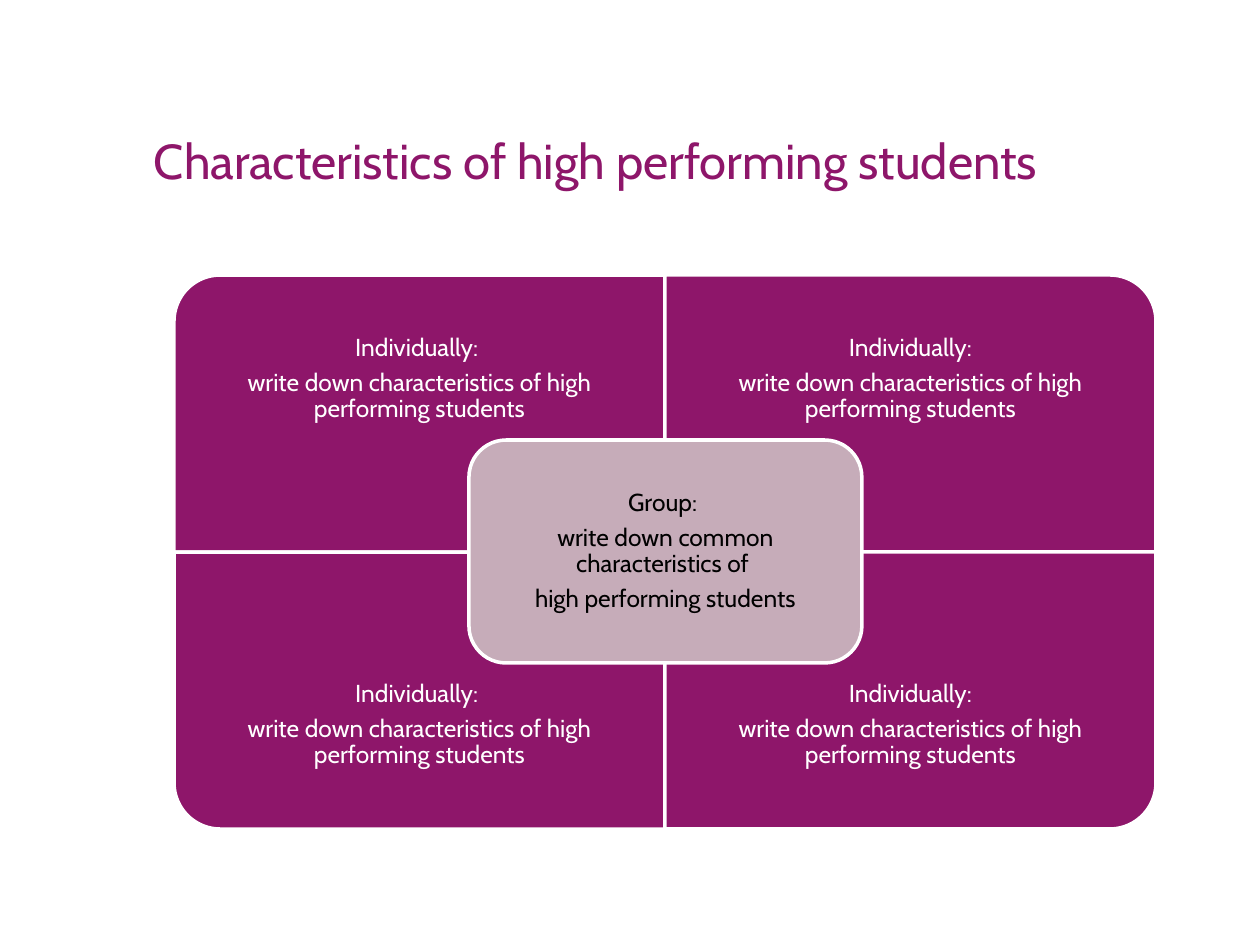
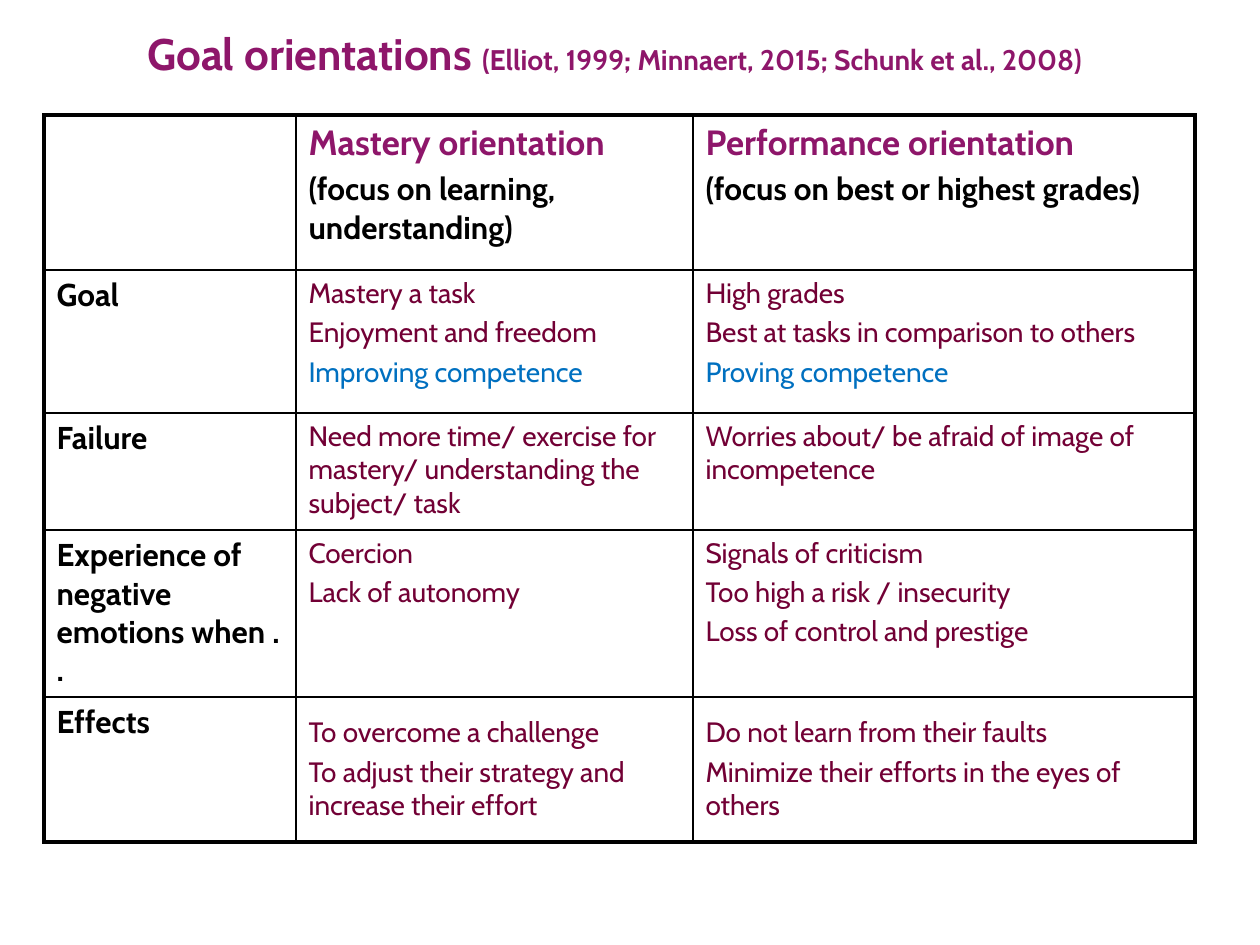
from itertools import product

from lxml import etree
from pptx import Presentation
from pptx import util as u
from pptx.dml.color import RGBColor
from pptx.enum import shapes, text
from pptx.oxml.ns import qn

PX = 914400 / 126
FONT = "Cabin"
COLORS = {
    "purple": "8E166A",
    "mauve": "C6ACB9",
    "wine": "720035",
    "blue": "0070C0",
    "black": "000000",
    "white": "FFFFFF",
}
STYLES = {
    "title": ("purple", {"size": u.Pt(28)}),
    "bold title": ("purple", {"size": u.Pt(25.2), "bold": True}),
    "citation": ("purple", {"size": u.Pt(16.2), "bold": True}),
    "individual": ("white", {"size": u.Pt(14)}),
    "group": ("black", {"size": u.Pt(14)}),
    "heading": ("purple", {"size": u.Pt(20), "bold": True}),
    "label": ("black", {"size": u.Pt(18), "bold": True}),
    "body": ("wine", {"size": u.Pt(16), "bold": False}),
    "key": ("blue", {"size": u.Pt(16), "bold": False}),
}
CENTER = text.PP_ALIGN.CENTER
MIDDLE = text.MSO_ANCHOR.MIDDLE


def px(value):
    return u.Emu(round(value * PX))


def rgb(color):
    return RGBColor.from_string(COLORS[color])


def set_values(target, values):
    for name, value in values.items():
        setattr(target, name, value)


def lines(style, *texts):
    return [[(style, line)] for line in texts]


class Deck:
    def __init__(self, width, height):
        self.presentation = Presentation()
        set_values(self.presentation, {"slide_width": px(width), "slide_height": px(height)})
        self.slide = None

    def add_slide(self):
        self.slide = self.presentation.slides.add_slide(self.presentation.slide_layouts[6])

    def fill_text(self, frame, paragraphs, paragraph_format=None, gap=0):
        for index, runs in enumerate(paragraphs):
            paragraph = frame.add_paragraph() if index else frame.paragraphs[0]
            set_values(paragraph, paragraph_format or {})
            for style, words in runs:
                color, font_format = STYLES[style]
                run = paragraph.add_run()
                run.text = words
                set_values(run.font, {"name": FONT, **font_format})
                run.font.color.rgb = rgb(color)
            if index and gap:
                paragraph.space_before = u.Pt(round(font_format["size"].pt * gap, 1))

    def frame(self, shape, inset, anchor):
        sides = ("left", "top", "right", "bottom")
        set_values(shape.text_frame, {
            "word_wrap": True,
            "vertical_anchor": anchor,
            **{f"margin_{side}": px(inset) for side in sides},
        })
        return shape.text_frame

    def text_box(self, box, paragraphs, paragraph_format, inset=0, anchor=text.MSO_ANCHOR.TOP):
        shape = self.slide.shapes.add_textbox(*map(px, box))
        self.fill_text(self.frame(shape, inset, anchor), paragraphs, paragraph_format)

    def panel(self, kind, box, fill, rotation=0):
        shape = self.slide.shapes.add_shape(kind, *map(px, box))
        shape.rotation = rotation
        shape.shadow.inherit = False
        shape.fill.solid()
        shape.fill.fore_color.rgb = rgb(fill)
        shape.line.color.rgb = rgb("white")
        shape.line.width = u.Pt(2)
        return shape

    def border(self, cell, side, width):
        properties = cell._tc.get_or_add_tcPr()
        line = etree.SubElement(properties, qn(f"a:ln{side}"), w=str(u.Pt(width)))
        fill = etree.SubElement(line, qn("a:solidFill"))
        etree.SubElement(fill, qn("a:srgbClr"), val=COLORS["black"])

    def table(self, left, top, widths, heights, rows):
        table = self.slide.shapes.add_table(
            len(rows), len(widths), px(left), px(top), px(sum(widths)), px(sum(heights))
        ).table
        set_values(table, {"first_row": False, "horz_banding": False})
        for column, width in zip(table.columns, widths):
            column.width = px(width)
        for row, height in zip(table.rows, heights):
            row.height = px(height)
        last_row, last_column = len(rows) - 1, len(widths) - 1
        for r, c in product(range(len(rows)), range(len(widths))):
            cell = table.cell(r, c)
            outer = {"L": c == 0, "R": c == last_column, "T": r == 0, "B": r == last_row}
            for side, is_outer in outer.items():
                self.border(cell, side, 2.25 if is_outer else 1)
            cell.fill.background()
            if r == last_row and c:
                cell.vertical_anchor = MIDDLE
            self.fill_text(cell.text_frame, rows[r][c], gap=0.2)


def characteristics_slide(deck):
    deck.add_slide()
    deck.text_box(
        (154, 116, 1023, 89),
        lines("title", "Characteristics of high performing students"),
        {"line_spacing": u.Pt(42)},
    )
    left, top, width, height, text_height = 174, 275, 491, 277, 208
    card_format = {"alignment": CENTER, "line_spacing": 0.9, "space_after": u.Pt(4.9)}
    rotations = (270, 0, 180, 90)
    for (row, column), rotation in zip(product(range(2), repeat=2), rotations):
        x, y = left + column * width, top + row * height
        w, h = (height, width) if rotation % 180 else (width, height)
        box = (x + (width - w) / 2, y + (height - h) / 2, w, h)
        deck.panel(shapes.MSO_SHAPE.ROUND_1_RECTANGLE, box, "purple", rotation)
        heading = "Individually:" if column else "Individually: "
        deck.text_box(
            (x, y + row * (height - text_height), width, text_height),
            lines("individual", heading, "write down characteristics of high performing students"),
            card_format, 14, MIDDLE,
        )
    group = deck.panel(shapes.MSO_SHAPE.ROUNDED_RECTANGLE, (469, 440, 393, 223), "mauve")
    deck.fill_text(
        deck.frame(group, 8, MIDDLE),
        lines("group", "Group: ", "write down common characteristics of ",
              "high performing students"),
        card_format,
    )


def goals_slide(deck):
    deck.add_slide()
    deck.text_box(
        (74, 26, 1081, 89),
        [[("bold title", "Goal orientations "),
          ("citation", "(Elliot, 1999; Minnaert, 2015; Schunk et al., 2008)")]],
        {"alignment": CENTER},
    )
    rows = [
        [[],
         lines("heading", "Mastery orientation")
         + lines("label", "(focus on learning, understanding)"),
         lines("heading", "Performance orientation")
         + lines("label", "(focus on best or highest grades)")],
        [lines("label", "Goal"),
         lines("body", "Mastery a task", "Enjoyment and freedom")
         + lines("key", "Improving competence"),
         lines("body", "High grades", "Best at tasks in comparison to others")
         + lines("key", "Proving competence")],
        [lines("label", "Failure"),
         lines("body", "Need more time/ exercise for mastery/ understanding the subject/ task"),
         lines("body", "Worries about/ be afraid of image of incompetence")],
        [lines("label", "Experience of negative emotions when . ."),
         lines("body", "Coercion", "Lack of autonomy"),
         lines("body", "Signals of criticism", "Too high a risk / insecurity",
               "Loss of control and prestige")],
        [lines("label", "Effects"),
         lines("body", "To overcome a challenge",
               "To adjust their strategy and increase their effort"),
         lines("body", "Do not learn from their faults",
               "Minimize their efforts in the eyes of others")],
    ]
    deck.table(44, 115, (252, 397, 502), (155, 143, 117, 167, 145), rows)


def main():
    deck = Deck(1260, 945)
    characteristics_slide(deck)
    goals_slide(deck)
    deck.presentation.save("out.pptx")


if __name__ == "__main__":
    main()
